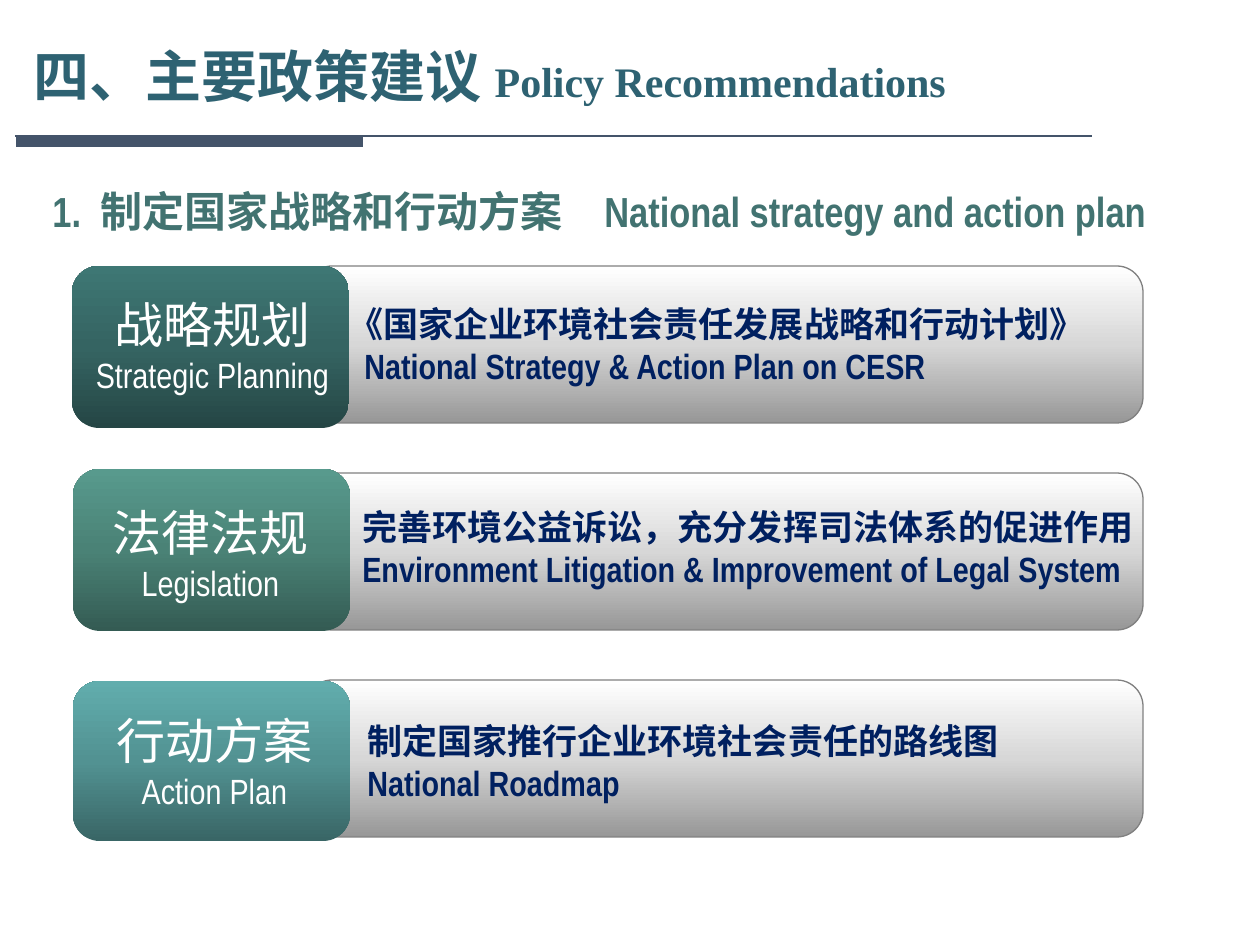
from lxml import etree
from pptx import Presentation
from pptx.dml.color import RGBColor
from pptx.enum import shapes, text
from pptx.oxml import ns
from pptx.util import Emu, Pt

PX = 914400 / 126
COLORS = {
    "title": "2E6272", "rule": "44546A", "heading": "427371",
    "body": "002060", "label": "FFFFFF", "border": "808080",
}
PANEL = ("979797", "D7D7D7", "FFFFFF")
ROWS = [
    {"label": ("战略规划", "Strategic Planning"), "label_box": (-15, 22, 311),
     "lines": ("《国家企业环境社会责任发展战略和行动计划》", "National Strategy & Action Plan on CESR"),
     "text_box": (264, 30, 770), "indent": 16,
     "tab_box": (0, 0, 162), "fill": ("254645", "356462", "3E7774")},
    {"label": ("法律法规", "Legislation"), "label_box": (20, 23, 237),
     "lines": ("完善环境公益诉讼，充分发挥司法体系的促进作用", "Environment Litigation & Improvement of Legal System"),
     "text_box": (278, 26, 804), "indent": 0,
     "tab_box": (1, -4, 162), "fill": ("345B53", "4A8276", "589A8D")},
    {"label": ("行动方案", "Action Plan"), "label_box": (-51, 24, 387),
     "lines": ("制定国家推行企业环境社会责任的路线图", "National Roadmap"),
     "text_box": (283, 33, 738), "indent": 0,
     "tab_box": (1, 1, 160), "fill": ("396666", "529292", "61ADAD")},
]


def px(*values):
    """Convert pixel lengths to EMU."""
    return [Emu(round(v * PX)) for v in values]


def rgb(name):
    """Look up a named colour."""
    return RGBColor.from_string(COLORS[name])


def style(r, size, color, font="Arial Narrow", bold=False):
    """Format one run."""
    r.font.size, r.font.name, r.font.bold = Pt(size), font, bold
    r.font.color.rgb = rgb(color)


def add_text(slide, box, lines, sizes, color, bold=False, align=text.PP_ALIGN.LEFT):
    """Add a text box with one paragraph per line."""
    tf = slide.shapes.add_textbox(*px(*box)).text_frame
    tf.word_wrap = True
    tf.text = "\n".join(lines)
    for p, size in zip(tf.paragraphs, sizes):
        p.alignment = align
        for r in p.runs:
            style(r, size, color, bold=bold)
    return tf


def add_gradient_box(slide, box, stops):
    """Add a rounded box shaded from bottom to top through three colours."""
    s = slide.shapes.add_shape(shapes.MSO_SHAPE.ROUNDED_RECTANGLE, *px(*box))
    s.shadow.inherit = False
    s.fill.gradient()
    s.fill.gradient_angle = 90
    gs_list = s._element.spPr.find(".//" + ns.qn("a:gsLst"))
    for gs in list(gs_list):
        gs_list.remove(gs)
    for i, color in enumerate(stops):
        gs = etree.SubElement(gs_list, ns.qn("a:gs"), pos=str(i * 50000))
        etree.SubElement(gs, ns.qn("a:srgbClr"), val=color)
    s.line.fill.background()
    return s


def add_header(slide, x, y):
    """Draw the slide title and the two-weight rule beneath it."""
    line = slide.shapes.add_connector(
        shapes.MSO_CONNECTOR.STRAIGHT, *px(x + 15, y + 136, x + 1092, y + 136))
    line.line.color.rgb, line.line.width = rgb("rule"), Pt(1.5)
    etree.SubElement(line._element.spPr, ns.qn("a:effectLst"))
    bar = slide.shapes.add_shape(
        shapes.MSO_SHAPE.RECTANGLE, *px(x + 16, y + 137, 347, 10))
    bar.shadow.inherit = False
    bar.fill.solid()
    bar.fill.fore_color.rgb = rgb("rule")
    bar.line.fill.background()
    tf = slide.shapes.add_textbox(*px(x + 21, y + 11, 1086, 136)).text_frame
    tf.word_wrap, tf.vertical_anchor = True, text.MSO_ANCHOR.MIDDLE
    p = tf.paragraphs[0]
    p.line_spacing = 0.9
    for words, size in (("四、主要政策建议 ", 32), ("Policy Recommendations", 24)):
        r = p.add_run()
        r.text = words
        style(r, size, "title", "Times New Roman", True)


def add_heading(slide, x, y):
    """Write the numbered heading with tabbed parts."""
    tf = add_text(slide, (x, y, 1181, 87),
                  ["1.\t制定国家战略和行动方案\tNational strategy and action plan"],
                  [24], "heading", True)
    p = tf.paragraphs[0]
    p.line_spacing = 1.4
    pPr = p._p.get_or_add_pPr()
    hang, stop = px(48, 539)
    pPr.set("marL", str(hang))
    pPr.set("indent", str(-hang))
    tabs = etree.SubElement(pPr, ns.qn("a:tabLst"))
    for pos in (hang, stop):
        etree.SubElement(tabs, ns.qn("a:tab"), pos=str(pos), algn="l")


def add_row(slide, x, y, row):
    """Draw one recommendation: shaded panel, coloured tab and their texts."""
    panel = add_gradient_box(slide, (x + 234, y, 837, 157), PANEL)
    panel.line.color.rgb, panel.line.width = rgb("border"), Pt(0.75)
    dx, dy, h = row["tab_box"]
    add_gradient_box(slide, (x + dx, y + dy, 277, h), row["fill"])
    dx, dy, w = row["label_box"]
    add_text(slide, (x + dx, y + dy, w, 115), row["label"], (28, 20), "label",
             align=text.PP_ALIGN.CENTER)
    dx, dy, w = row["text_box"]
    tf = add_text(slide, (x + dx, y + dy, w, 97), row["lines"], (20, 20), "body", True)
    if row["indent"]:
        tf.paragraphs[1]._p.get_or_add_pPr().set("marL", str(px(row["indent"])[0]))


def main():
    """Build and save the slide."""
    prs = Presentation()
    prs.slide_width, prs.slide_height = px(1260, 945)
    slide = prs.slides.add_slide(prs.slide_layouts[6])
    add_header(slide, 0, 0)
    add_heading(slide, 40, 159)
    for i, row in enumerate(ROWS):
        add_row(slide, 72, 266 + 207 * i, row)
    prs.save("out.pptx")


if __name__ == "__main__":
    main()
